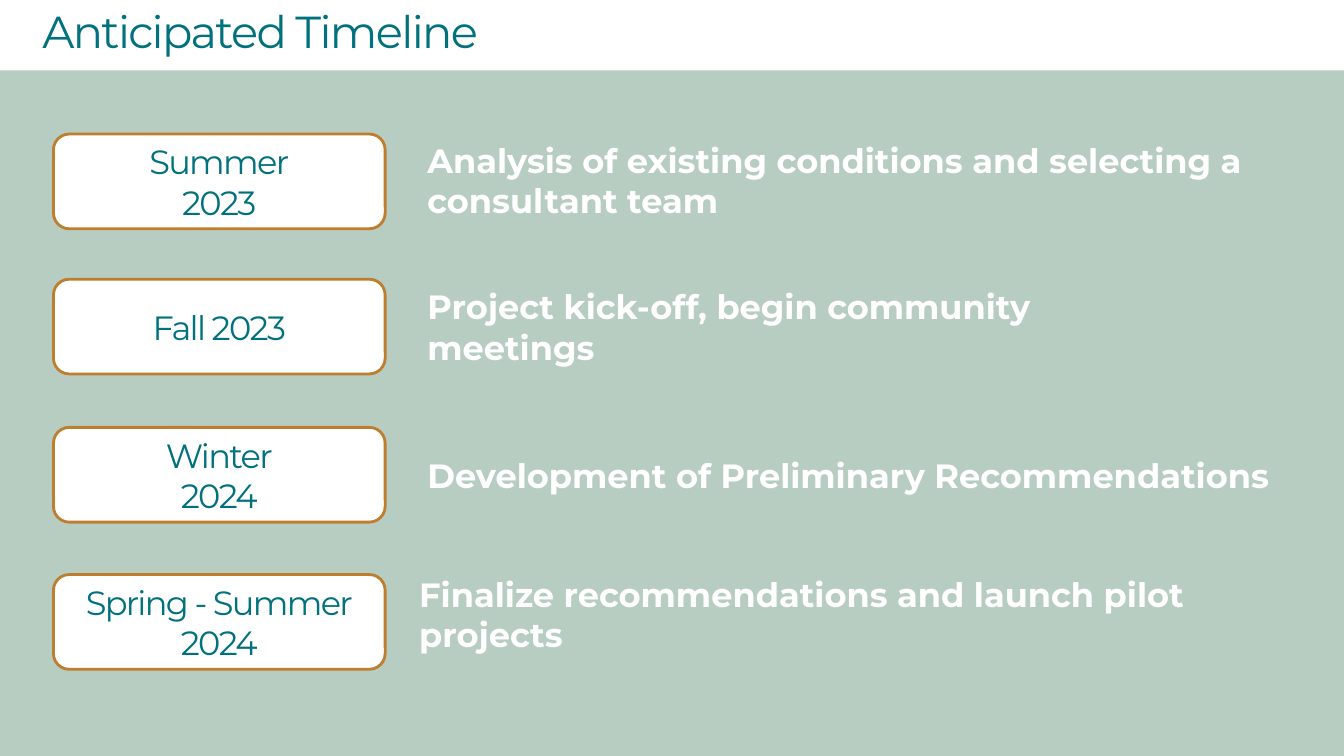
from pptx import Presentation
from pptx.dml.color import RGBColor
from pptx.enum.shapes import MSO_SHAPE
from pptx.enum.text import MSO_ANCHOR, PP_ALIGN
from pptx.util import Inches, Pt

RECT, ROUND = MSO_SHAPE.RECTANGLE, MSO_SHAPE.ROUNDED_RECTANGLE
TOP, MIDDLE = MSO_ANCHOR.TOP, MSO_ANCHOR.MIDDLE
LEFT, CENTER = PP_ALIGN.LEFT, PP_ALIGN.CENTER

SAGE = RGBColor(0xB7, 0xCD, 0xC2)
TEAL = RGBColor(0x00, 0x71, 0x7D)
OCHRE = RGBColor(0xBD, 0x7F, 0x2F)
WHITE = RGBColor(0xFF, 0xFF, 0xFF)

# Season, its box top, description, and the description's left, top, width, height
PHASES = [
    ("Summer\n2023", 1.33, "Analysis of existing conditions and selecting a consultant team",
     (4.14, 1.34, 9.02, 0.91)),
    ("Fall 2023", 2.77, "Project kick-off, begin community meetings",
     (4.14, 2.79, 7.59, 0.91)),
    ("Winter\n2024", 4.24, "Development of Preliminary Recommendations",
     (4.14, 4.46, 8.67, 0.5)),
    ("Spring - Summer\n2024", 5.7, "Finalize recommendations and launch pilot projects",
     (4.06, 5.64, 9.2, 0.91)),
]


class TimelineSlide:
    font = "Montserrat"

    def __init__(self, prs):
        self.s = prs.slides.add_slide(prs.slide_layouts[6])
        fill = self.s.background.fill
        fill.solid()
        fill.fore_color.rgb = SAGE

    def set_text(self, tf, text, size, color, bold=False, spacing=0, align=LEFT, anchor=TOP):
        tf.word_wrap = True
        tf.vertical_anchor = anchor
        tf.text = text
        for p in tf.paragraphs:
            p.alignment = align
            for r in p.runs:
                r.font.name = self.font
                r.font.size = Pt(size)
                r.font.bold = bold
                r.font.color.rgb = color
                # Letter spacing in hundredths of a point
                r._r.get_or_add_rPr().set("spc", str(round(spacing * 100)))

    def text(self, box, text, size, color, **style):
        sp = self.s.shapes.add_textbox(*map(Inches, box))
        self.set_text(sp.text_frame, text, size, color, **style)
        return sp

    def shape(self, kind, box, line=None):
        sp = self.s.shapes.add_shape(kind, *map(Inches, box))
        sp.shadow.inherit = False
        sp.fill.solid()
        sp.fill.fore_color.rgb = WHITE
        if line is None:
            sp.line.fill.background()
        else:
            sp.line.color.rgb = line
            sp.line.width = Pt(2)
        return sp

    def season(self, top, label):
        sp = self.shape(ROUND, (0.53, top, 3.29, 0.94), OCHRE)
        self.set_text(sp.text_frame, label, 24, TEAL, spacing=-1.2, align=CENTER, anchor=MIDDLE)


def main():
    prs = Presentation()
    prs.slide_width, prs.slide_height = Inches(13.33), Inches(7.5)
    slide = TimelineSlide(prs)

    # Title band
    slide.shape(RECT, (0, 0, 13.33, 0.7))
    title = slide.text((0.42, 0.03, 10.96, 0.57), "Anticipated Timeline", 32, TEAL, spacing=-1.2)
    tf = title.text_frame
    tf.margin_left = tf.margin_right = tf.margin_bottom = 0
    tf.margin_top = Inches(0.01)

    # Timeline rows
    for label, top, description, box in PHASES:
        slide.season(top, label)
        slide.text(box, description, 24, WHITE, bold=True)

    prs.save("out.pptx")


if __name__ == "__main__":
    main()
